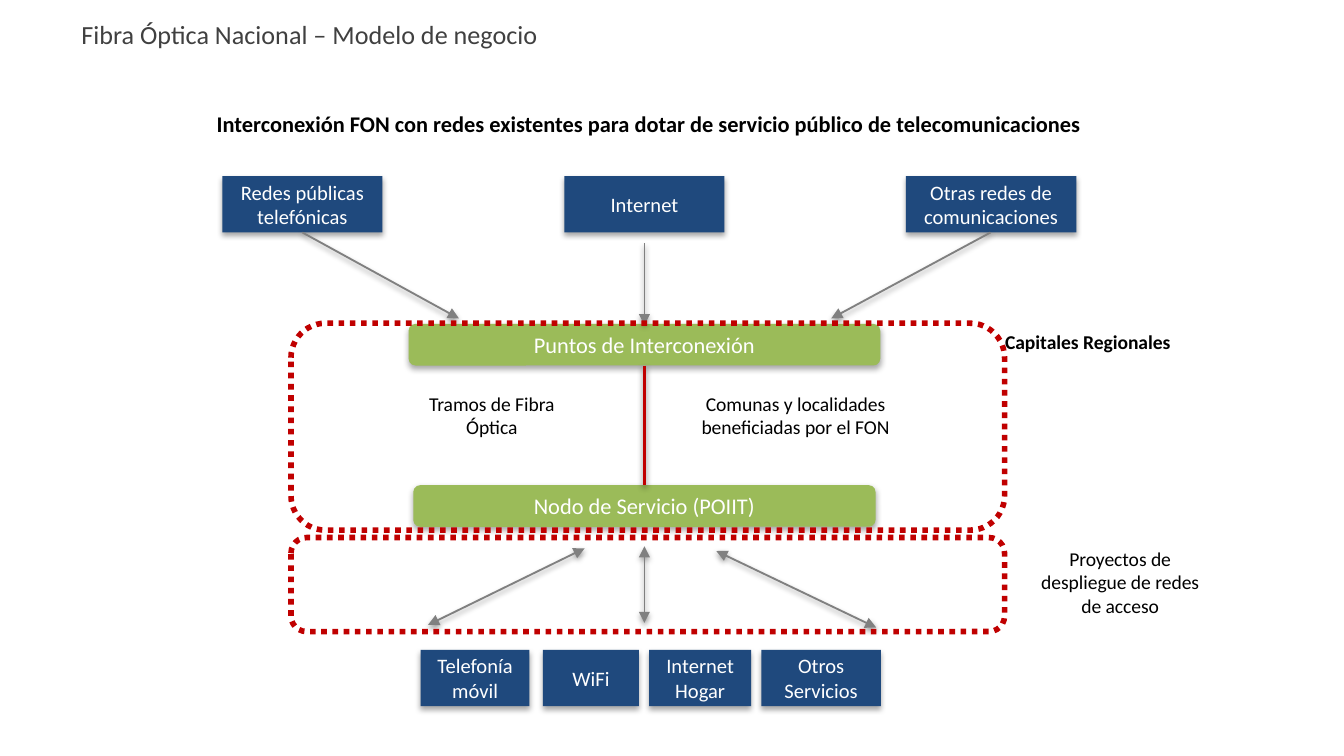
from lxml import etree
from pptx import Presentation
from pptx import util as u
from pptx.dml.color import RGBColor
from pptx.enum import dml, shapes, text
from pptx.oxml import ns

SCALE = 4572  # EMU in one px, at 200 px to the inch
FONT = "Calibri"
COLOURS = {
    "network": "1F497D",
    "node": "9BBB59",
    "fibre": "C00000",
    "arrow": "808080",
    "title": "404040",
    "black": "000000",
    "white": "FFFFFF",
}
AXIS = 959  # centre line of the diagram
ALIGN = text.PP_ALIGN


def px(value):
    return u.Emu(value * SCALE)


def colour(name):
    return RGBColor.from_string(COLOURS[name])


def add_child(parent, tag, **attributes):
    child = etree.SubElement(parent, ns.qn(tag))
    for key, value in attributes.items():
        child.set(key, str(value))
    return child


def add_shadow(properties, opacity, distance):
    """Put a soft shadow straight below the object."""
    effects = properties.find(ns.qn("a:effectLst"))
    if effects is None:
        effects = add_child(properties, "a:effectLst")
    shadow = add_child(effects, "a:outerShdw", blurRad=u.Pt(3.1), dist=u.Pt(distance),
                       dir=90 * 60000, rotWithShape=0)
    tint = add_child(shadow, "a:srgbClr", val=COLOURS["black"])
    add_child(tint, "a:alpha", val=opacity * 1000)


def write(shape, words, size, ink, bold=False, align=ALIGN.CENTER,
          anchor=text.MSO_ANCHOR.TOP):
    frame = shape.text_frame
    frame.word_wrap = True
    frame.auto_size = text.MSO_AUTO_SIZE.NONE
    frame.vertical_anchor = anchor
    para = frame.paragraphs[0]
    para.alignment = align
    span = para.add_run()
    span.text = words
    span.font.name = FONT
    span.font.size = u.Pt(size)
    span.font.bold = bold
    span.font.color.rgb = colour(ink)


def add_title(page, words):
    title = page.shapes.title
    title.left, title.top, title.width, title.height = map(px, (101, 17, 1758, 82))
    write(title, words, 14, "title", align=ALIGN.JUSTIFY)


def add_box(page, words, place, fill, size, kind=shapes.MSO_SHAPE.RECTANGLE):
    box = page.shapes.add_shape(kind, *map(px, place))
    box.fill.solid()
    box.fill.fore_color.rgb = colour(fill)
    box.line.fill.background()
    box.shadow.inherit = False
    add_shadow(box.element.spPr, 35, 1.8)
    write(box, words, size, "white", anchor=text.MSO_ANCHOR.MIDDLE)


def add_frame(page, top, height):
    frame = page.shapes.add_shape(shapes.MSO_SHAPE.ROUNDED_RECTANGLE,
                                  *map(px, (433, top, 1062, height)))
    frame.fill.background()
    frame.line.color.rgb = colour("fibre")
    frame.line.width = u.Pt(3)
    frame.line.dash_style = dml.MSO_LINE.ROUND_DOT
    frame.shadow.inherit = False


def add_link(page, start, end, ink="arrow", width=1, heads=()):
    link = page.shapes.add_connector(shapes.MSO_CONNECTOR.STRAIGHT,
                                     *map(px, start + end))
    link.line.color.rgb = colour(ink)
    link.line.width = u.Pt(width)
    outline = link.element.spPr.find(ns.qn("a:ln"))
    for head in heads:
        add_child(outline, head, type="triangle")
    add_shadow(link.element.spPr, 38, 1.6)


def add_label(page, words, place, size=10.5, bold=False, align=ALIGN.CENTER):
    label = page.shapes.add_textbox(*map(px, place))
    write(label, words, size, "black", bold, align)


def main():
    deck = Presentation()
    deck.slide_width, deck.slide_height = px(2000), px(1125)
    page = deck.slides.add_slide(deck.slide_layouts[5])
    add_title(page, "Fibra Óptica Nacional – Modelo de negocio")

    # Existing networks above, access services below
    rows = {
        262: [("Redes públicas telefónicas", 331, 238), ("Internet", 840, 238),
              ("Otras redes de comunicaciones", 1348, 254)],
        967: [("Telefonía móvil", 626, 162), ("WiFi", 808, 143),
              ("Internet Hogar", 966, 152), ("Otros Servicios", 1133, 178)],
    }
    for top, boxes in rows.items():
        for words, left, width in boxes:
            add_box(page, words, (left, top, width, 84), "network", 11)

    # Ends of the fibre section
    for words, top, width in [("Puntos de Interconexión", 482, 702),
                              ("Nodo de Servicio (POIIT)", 722, 688)]:
        add_box(page, words, (AXIS - width // 2, top, width, 62), "node", 12,
                shapes.MSO_SHAPE.ROUNDED_RECTANGLE)

    # Fibre and arrows
    add_link(page, (AXIS, 544), (AXIS, 722), "fibre", 2)
    for start, end in [((450, 346), (683, 474)), ((AXIS, 362), (AXIS, 484)),
                       ((1474, 346), (1237, 474))]:
        add_link(page, start, end, heads=("a:tailEnd",))
    for start, end in [((637, 930), (870, 816)), ((AXIS, 927), (AXIS, 813)),
                       ((1304, 934), (1066, 820))]:
        add_link(page, start, end, heads=("a:headEnd", "a:tailEnd"))

    # Dotted frames: trunk network and access network
    add_frame(page, 481, 308)
    add_frame(page, 800, 140)

    # Labels
    add_label(page, "Interconexión FON con redes existentes para dotar de "
              "servicio público de telecomunicaciones", (142, 154, 1648, 100), 12, True)
    add_label(page, "Capitales Regionales", (1476, 481, 382, 54), bold=True,
              align=ALIGN.LEFT)
    add_label(page, "Tramos de Fibra Óptica", (588, 573, 288, 98))
    add_label(page, "Comunas y localidades beneficiadas por el FON",
              (1020, 573, 328, 124))
    add_label(page, "Proyectos de despliegue de redes de acceso",
              (1523, 804, 288, 124))

    deck.save("out.pptx")


if __name__ == "__main__":
    main()
